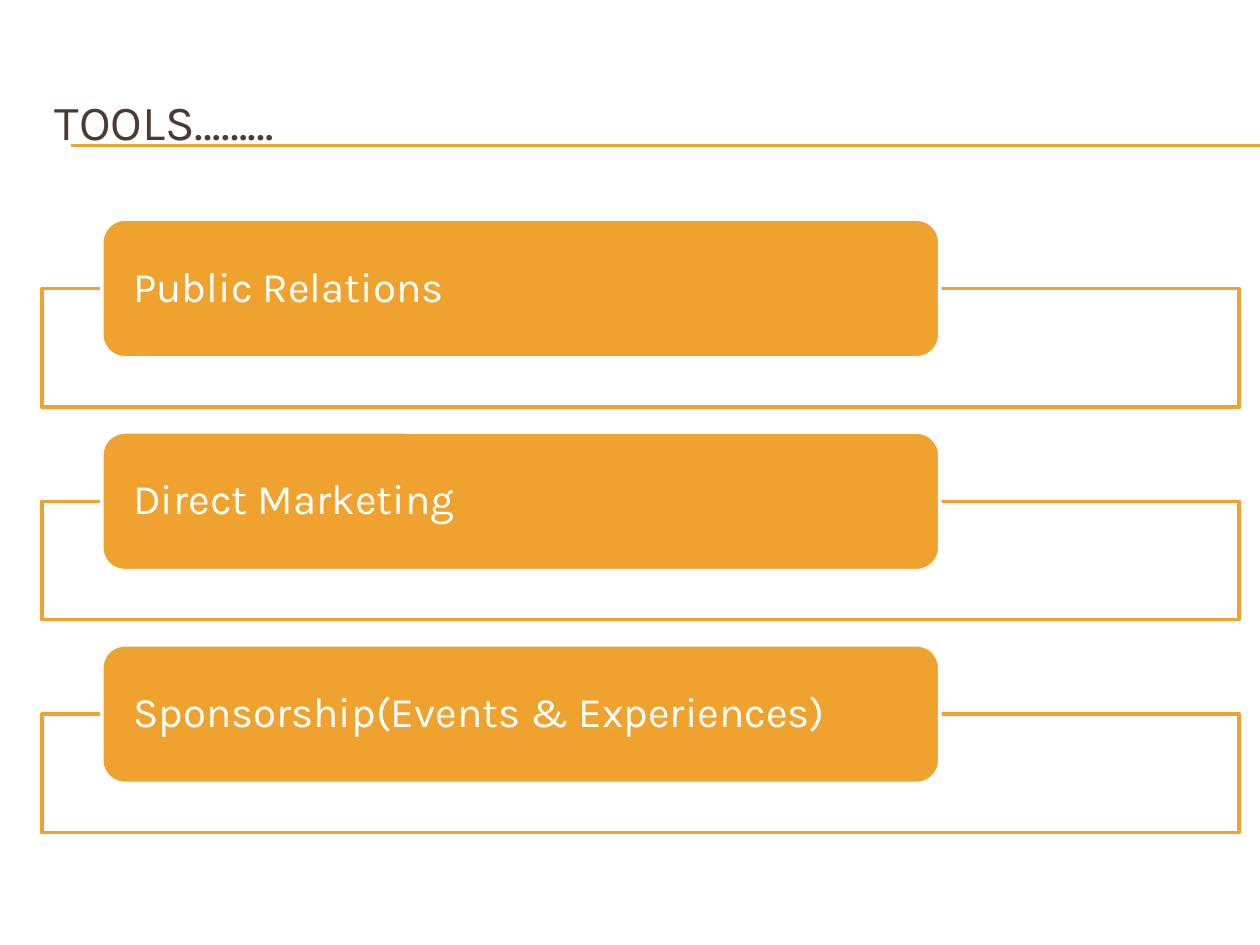
from lxml.etree import SubElement
from pptx import Presentation
from pptx.dml.color import RGBColor
from pptx.enum.shapes import MSO_CONNECTOR, MSO_SHAPE
from pptx.enum.text import MSO_ANCHOR, MSO_AUTO_SIZE, PP_ALIGN
from pptx.oxml.ns import qn
from pptx.util import Pt

COLORS = {"accent": "F0A22E", "title": "4E3B30", "white": "FFFFFF"}
TOOLS = ["Public Relations", "Direct Marketing", "Sponsorship(Events & Experiences)"]
FONT = "Karla"


def color(key):
    """Return the palette colour for a key."""
    return RGBColor.from_string(COLORS[key])


def write(frame, text, size, color_key, inset, line_spacing):
    """Write one left-aligned, vertically centred line in a text frame."""
    frame_format = {
        "text": text, "word_wrap": True, "auto_size": MSO_AUTO_SIZE.NONE,
        "vertical_anchor": MSO_ANCHOR.MIDDLE,
        "margin_left": Pt(inset), "margin_right": Pt(inset),
        "margin_top": 0, "margin_bottom": 0,
    }
    for name, value in frame_format.items():
        setattr(frame, name, value)
    paragraph = frame.paragraphs[0]
    paragraph.alignment = PP_ALIGN.LEFT
    paragraph.line_spacing = line_spacing
    font = paragraph.runs[0].font
    for name, value in {"name": FONT, "size": Pt(size), "bold": False}.items():
        setattr(font, name, value)
    font.color.rgb = color(color_key)


def add_heading(slide, left, top, width, height):
    """Place the title in its box."""
    title = slide.shapes.title
    box = {"left": left, "top": top, "width": width, "height": height}
    for name, value in box.items():
        setattr(title, name, Pt(value))
    write(title.text_frame, "TOOLS………", 28, "title", 7.2, 1)


def add_rules(slide, left, top, right, gap):
    """Draw the double rule under the title."""
    for y in (top, top + gap):
        rule = slide.shapes.add_connector(
            MSO_CONNECTOR.STRAIGHT, Pt(left), Pt(y), Pt(right), Pt(y))
        rule.line.color.rgb = color("accent")
        rule.line.width = Pt(0.75)
        SubElement(rule.element.spPr, qn("a:effectLst"))


def add_box(slide, preset, box, fill_key, line_key):
    """Add a filled, outlined shape without shadow."""
    shape = slide.shapes.add_shape(preset, *map(Pt, box))
    shape.shadow.inherit = False
    shape.fill.solid()
    shape.fill.fore_color.rgb = color(fill_key)
    shape.line.color.rgb = color(line_key)
    shape.line.width = Pt(2)
    return shape


def add_tool(slide, text, left, top, width):
    """Draw one tool: an outlined frame with a label over its top edge."""
    label_height = 79.2
    frame = add_box(slide, MSO_SHAPE.RECTANGLE,
                    (left, top + label_height / 2, width, 67.68), "white", "accent")
    fill_color = frame.element.spPr.find(qn("a:solidFill"))[0]
    SubElement(fill_color, qn("a:alpha"), val="90000")
    label = add_box(slide, MSO_SHAPE.ROUNDED_RECTANGLE,
                    (left + width * 0.05, top, width * 0.7, label_height),
                    "accent", "white")
    write(label.text_frame, text, 24, "white", 14.1, 0.9)


def add_tools(slide, left, top, width, pitch):
    """Stack the tools at an equal pitch."""
    for index, text in enumerate(TOOLS):
        add_tool(slide, text, left, top + index * pitch, width)


def main():
    """Build and save the slide."""
    presentation = Presentation()
    presentation.slide_width, presentation.slide_height = Pt(720), Pt(540)
    slide = presentation.slides.add_slide(presentation.slide_layouts[5])
    add_rules(slide, left=40.5, top=82.8, right=720, gap=0.6)
    add_heading(slide, left=24, top=36, width=684, height=66)
    add_tools(slide, left=24, top=125.3, width=684, pitch=121.6)
    presentation.save("out.pptx")


if __name__ == "__main__":
    main()
